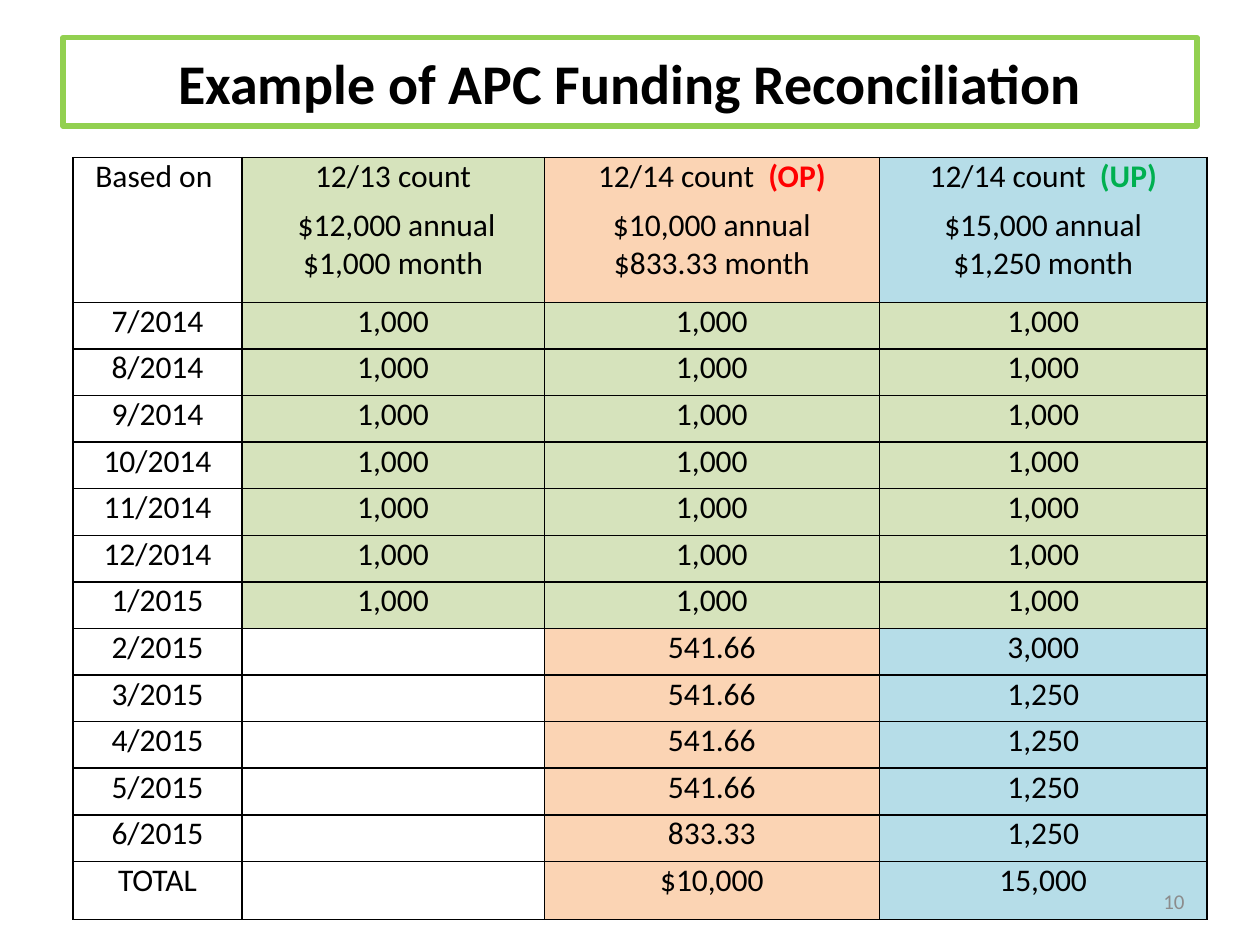
import pptx
import pptx.util
import pptx.dml.color
import pptx.enum.shapes
import pptx.enum.text
import pptx.oxml
import pptx.oxml.ns

Inches = pptx.util.Inches
RGBColor = pptx.dml.color.RGBColor
ALIGN = pptx.enum.text.PP_ALIGN
MIDDLE = pptx.enum.text.MSO_ANCHOR.MIDDLE

BLACK = RGBColor(0x00, 0x00, 0x00)
WHITE = RGBColor(0xFF, 0xFF, 0xFF)
FRAME_GREEN = RGBColor(0x92, 0xD0, 0x50)
GREEN = RGBColor(0xD6, 0xE3, 0xBC)
ORANGE = RGBColor(0xFB, 0xD4, 0xB4)
BLUE = RGBColor(0xB6, 0xDD, 0xE8)
OVERPAID_RED = RGBColor(0xFF, 0x00, 0x00)
UNDERPAID_GREEN = RGBColor(0x00, 0xB0, 0x50)
GREY = RGBColor(0x8C, 0x8C, 0x8C)

COLUMN_WIDTHS = [1.34, 2.4, 2.66, 2.6]
HEADER_HEIGHT, ROW_HEIGHT, TOTAL_HEIGHT = 1.15, 0.37, 0.46
HEADERS = [
    (["Based on "], None, None, None),
    (["12/13 count", " $12,000 annual", "$1,000 month"], None, None, GREEN),
    (["12/14 count  ", "$10,000 annual", "$833.33 month"], "(OP)", OVERPAID_RED, ORANGE),
    (["12/14 count  ", "$15,000 annual", "$1,250 month"], "(UP)", UNDERPAID_GREEN, BLUE),
]
PAID_MONTHS = ["7/2014", "8/2014", "9/2014", "10/2014", "11/2014", "12/2014", "1/2015"]
ADJUSTED_ROWS = [
    ("2/2015", "", "541.66", "3,000"),
    ("3/2015", "", "541.66", "1,250"),
    ("4/2015", "", "541.66", "1,250"),
    ("5/2015", "", "541.66", "1,250"),
    ("6/2015", "", "833.33", "1,250"),
    ("TOTAL", "", "$10,000", "15,000"),
]


def add_span(para, text, size, color=BLACK, bold=False):
    """Add one formatted run to a paragraph."""
    span = para.add_run()
    span.text = text
    span.font.name = "Calibri"
    span.font.size = pptx.util.Pt(size)
    span.font.bold = bold
    span.font.color.rgb = color


def add_title(page, left, top, width, height):
    """Place the framed title."""
    box = page.shapes.add_shape(
        pptx.enum.shapes.MSO_SHAPE.RECTANGLE,
        Inches(left), Inches(top), Inches(width), Inches(height))
    box.shadow.inherit = False
    box.fill.solid()
    box.fill.fore_color.rgb = WHITE
    box.line.color.rgb = FRAME_GREEN
    box.line.width = pptx.util.Pt(3)
    frame = box.text_frame
    frame.word_wrap = True
    frame.vertical_anchor = MIDDLE
    para = frame.paragraphs[0]
    para.alignment = ALIGN.CENTER
    add_span(para, "Example of APC Funding Reconciliation", 32, bold=True)


def style_cell(cell, color):
    """Give a cell its margins, black borders and fill."""
    cell.margin_left = cell.margin_right = Inches(0.07)
    cell.margin_top = cell.margin_bottom = 0
    properties = cell._tc.get_or_add_tcPr()
    for side in ("lnL", "lnR", "lnT", "lnB"):
        properties.append(pptx.oxml.parse_xml(
            f'<a:{side} {pptx.oxml.ns.nsdecls("a")} w="12700"><a:solidFill>'
            f'<a:srgbClr val="{BLACK}"/></a:solidFill></a:{side}>'))
    if color is None:
        cell.fill.background()
    else:
        cell.fill.solid()
        cell.fill.fore_color.rgb = color


def fill_cell(cell, lines, color, tag=None, tag_color=None):
    """Write centred lines into a cell, with an optional tag after the first."""
    style_cell(cell, color)
    frame = cell.text_frame
    for index, line in enumerate(lines):
        para = frame.paragraphs[0] if index == 0 else frame.add_paragraph()
        para.alignment = ALIGN.CENTER
        if line:
            add_span(para, line, 18)
        if index == 0 and len(lines) > 1:
            para.space_after = pptx.util.Pt(6)
        if index == 0 and tag:
            add_span(para, tag, 18, tag_color, True)


def add_funding_table(page, left, top, width, height):
    """Place the month by month funding table."""
    paid = [(month, "1,000", "1,000", "1,000") for month in PAID_MONTHS]
    rows = paid + ADJUSTED_ROWS
    table = page.shapes.add_table(
        len(rows) + 1, len(COLUMN_WIDTHS),
        Inches(left), Inches(top), Inches(width), Inches(height)).table
    table.first_row = table.horz_banding = False
    for column, column_width in zip(table.columns, COLUMN_WIDTHS):
        column.width = Inches(column_width)
    heights = [HEADER_HEIGHT] + [ROW_HEIGHT] * (len(rows) - 1) + [TOTAL_HEIGHT]
    for row, row_height in zip(table.rows, heights):
        row.height = Inches(row_height)
    for column, (lines, tag, tag_color, color) in enumerate(HEADERS):
        fill_cell(table.cell(0, column), lines, color, tag, tag_color)
    for index, values in enumerate(rows):
        colors = [None, GREEN, GREEN, GREEN] if index < len(paid) else [None, None, ORANGE, BLUE]
        for column, (value, color) in enumerate(zip(values, colors)):
            fill_cell(table.cell(index + 1, column), [value], color)


def add_page_number(page, left, top, width, height):
    """Place the page number at the lower right."""
    box = page.shapes.add_textbox(Inches(left), Inches(top), Inches(width), Inches(height))
    frame = box.text_frame
    frame.word_wrap = True
    frame.vertical_anchor = MIDDLE
    para = frame.paragraphs[0]
    para.alignment = ALIGN.RIGHT
    add_span(para, "10", 12, GREY)


def main():
    """Build and save the deck."""
    deck = pptx.Presentation()
    deck.slide_width, deck.slide_height = Inches(10), Inches(7.5)
    page = deck.slides.add_slide(deck.slide_layouts[6])
    add_title(page, 0.5, 0.3, 9, 0.7)
    add_funding_table(page, 0.58, 1.25, 9, 6)
    add_page_number(page, 7.17, 6.95, 2.33, 0.4)
    deck.save("out.pptx")


if __name__ == "__main__":
    main()
